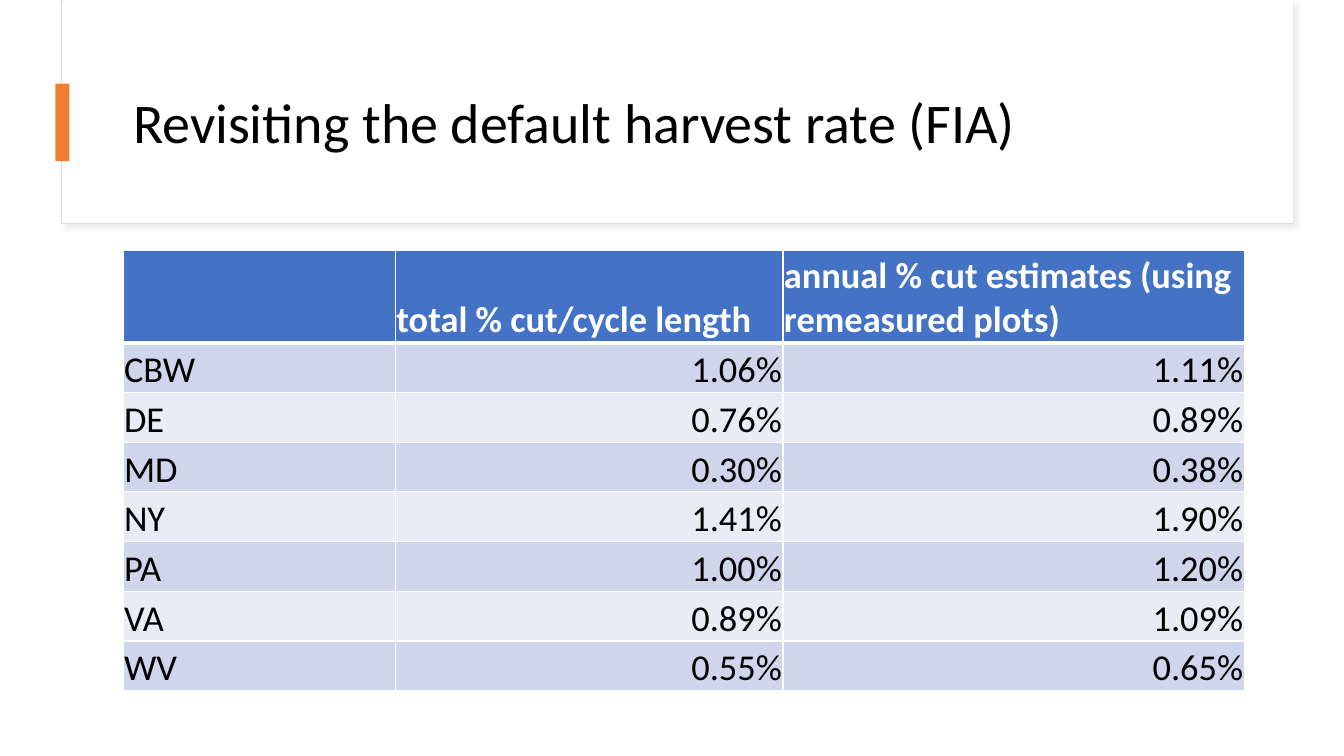
import pptx
import pptx.dml.color
import pptx.enum.shapes
import pptx.enum.text
import pptx.oxml
import pptx.oxml.ns
import pptx.util

RGB = pptx.dml.color.RGBColor
WHITE = RGB(0xFF, 0xFF, 0xFF)
BLACK = RGB(0x00, 0x00, 0x00)
ORANGE = RGB(0xED, 0x7D, 0x31)
BLUE = RGB(0x44, 0x72, 0xC4)
BAND_DARK = RGB(0xCF, 0xD5, 0xEA)
BAND_LIGHT = RGB(0xE9, 0xEB, 0xF5)
OUTLINE = RGB(0xDE, 0xDE, 0xDE)
SHADOW = RGB(0xD9, 0xD9, 0xD9)

ANCHOR = pptx.enum.text.MSO_ANCHOR
ALIGN = pptx.enum.text.PP_ALIGN
GRID_COLS, GRID_ROWS = 21.85, 15.2  # one grid row is one table row high

HEADER = ["", "total % cut/cycle length",
          "annual % cut estimates (using remeasured plots)"]
RATES = [
    ["CBW", "1.06%", "1.11%"],
    ["DE", "0.76%", "0.89%"],
    ["MD", "0.30%", "0.38%"],
    ["NY", "1.41%", "1.90%"],
    ["PA", "1.00%", "1.20%"],
    ["VA", "0.89%", "1.09%"],
    ["WV", "0.55%", "0.65%"],
]


def write(tf, text, size=26, color=BLACK, bold=False, align=ALIGN.LEFT,
          spacing=1.0, font="Calibri"):
    p = tf.paragraphs[0]
    p.alignment, p.line_spacing = align, spacing
    r = p.add_run()
    r.text = text
    r.font.name, r.font.size, r.font.bold = font, pptx.util.Pt(size), bold
    r.font.color.rgb = color


def add_xml(parent, xml, index=None):
    el = pptx.oxml.parse_xml(xml.replace(
        ">", " " + pptx.oxml.ns.nsdecls("a") + ">", 1))
    parent.insert(len(parent) if index is None else index, el)


class Deck:
    def __init__(self, prs):
        self.col = prs.slide_width / GRID_COLS
        self.row = prs.slide_height / GRID_ROWS
        self.slide = prs.slides.add_slide(prs.slide_layouts[5])

    def box(self, x, y, w, h):
        return (round(x * self.col), round(y * self.row),
                round(w * self.col), round(h * self.row))

    def rect(self, x, y, w, h, fill, line=None, shadow=None):
        sp = self.slide.shapes.add_shape(
            pptx.enum.shapes.MSO_SHAPE.RECTANGLE, *self.box(x, y, w, h))
        sp.fill.solid()
        sp.fill.fore_color.rgb = fill
        if line is None:
            sp.line.fill.background()
        else:
            sp.line.color.rgb = line
            sp.line.width = pptx.util.Pt(0.75)
        sp.shadow.inherit = False
        if shadow is not None:
            effects = sp.element.spPr.find(pptx.oxml.ns.qn("a:effectLst"))
            add_xml(effects, '<a:outerShdw blurRad="50800" dist="38100" '
                    'dir="2700000" algn="tl" rotWithShape="0">'
                    f'<a:srgbClr val="{shadow}"><a:alpha val="50000"/>'
                    '</a:srgbClr></a:outerShdw>')

    def title(self, x, y, w, h, text):
        sp = self.slide.shapes.title
        sp.left, sp.top, sp.width, sp.height = self.box(x, y, w, h)
        sp.text_frame.vertical_anchor = ANCHOR.MIDDLE
        sp.text_frame.word_wrap = True
        write(sp.text_frame, text, size=40, spacing=0.9)
        sp.element.getparent().append(sp.element)  # bring above the panel

    def cell(self, cell, text, fill, top=1, bottom=1, **fmt):
        cell.fill.solid()
        cell.fill.fore_color.rgb = fill
        cell.vertical_anchor = ANCHOR.BOTTOM
        cell.margin_left = cell.margin_right = pptx.util.Inches(0.01)
        cell.margin_top, cell.margin_bottom = pptx.util.Inches(0.01), 0
        borders = {"L": 1, "R": 1, "T": top, "B": bottom}
        for i, (side, pts) in enumerate(borders.items()):
            add_xml(cell._tc.get_or_add_tcPr(),
                    f'<a:ln{side} w="{pptx.util.Pt(pts)}"><a:solidFill>'
                    f'<a:srgbClr val="{WHITE}"/></a:solidFill></a:ln{side}>', i)
        if text:
            write(cell.text_frame, text, **fmt)

    def table(self, x, y, widths, header_height, header, rows):
        height = header_height + len(rows)
        table = self.slide.shapes.add_table(
            len(rows) + 1, len(header),
            *self.box(x, y, sum(widths), height)).table
        for column, width in zip(table.columns, widths):
            column.width = round(width * self.col)
        for i, row in enumerate(table.rows):
            row.height = round((1 if i else header_height) * self.row)
        for j, text in enumerate(header):
            self.cell(table.cell(0, j), text, BLUE, bottom=3,
                      color=WHITE, bold=True)
        for i, values in enumerate(rows, 1):
            for j, text in enumerate(values):
                self.cell(table.cell(i, j), text,
                          BAND_DARK if i % 2 else BAND_LIGHT,
                          top=3 if i == 1 else 1,
                          align=ALIGN.RIGHT if j else ALIGN.LEFT)


def main():
    prs = pptx.Presentation()
    prs.slide_width = pptx.util.Inches(13.33)
    prs.slide_height = pptx.util.Inches(7.5)
    deck = Deck(prs)

    # Title panel with its outline and shadow
    deck.rect(1, 0.02, 20.02, 4.48, WHITE, line=OUTLINE, shadow=SHADOW)
    deck.rect(1.02, 0, 20, 4.46, WHITE)
    deck.title(2, 1.22, 18.23, 2.61, "Revisiting the default harvest rate (FIA)")

    # Accent bar
    deck.rect(0.9, 1.68, 0.23, 1.56, ORANGE)

    # Harvest rates by state
    deck.table(2, 5.03, [4.43, 6.3, 7.5], 1.86, HEADER, RATES)

    prs.save("out.pptx")


if __name__ == "__main__":
    main()
